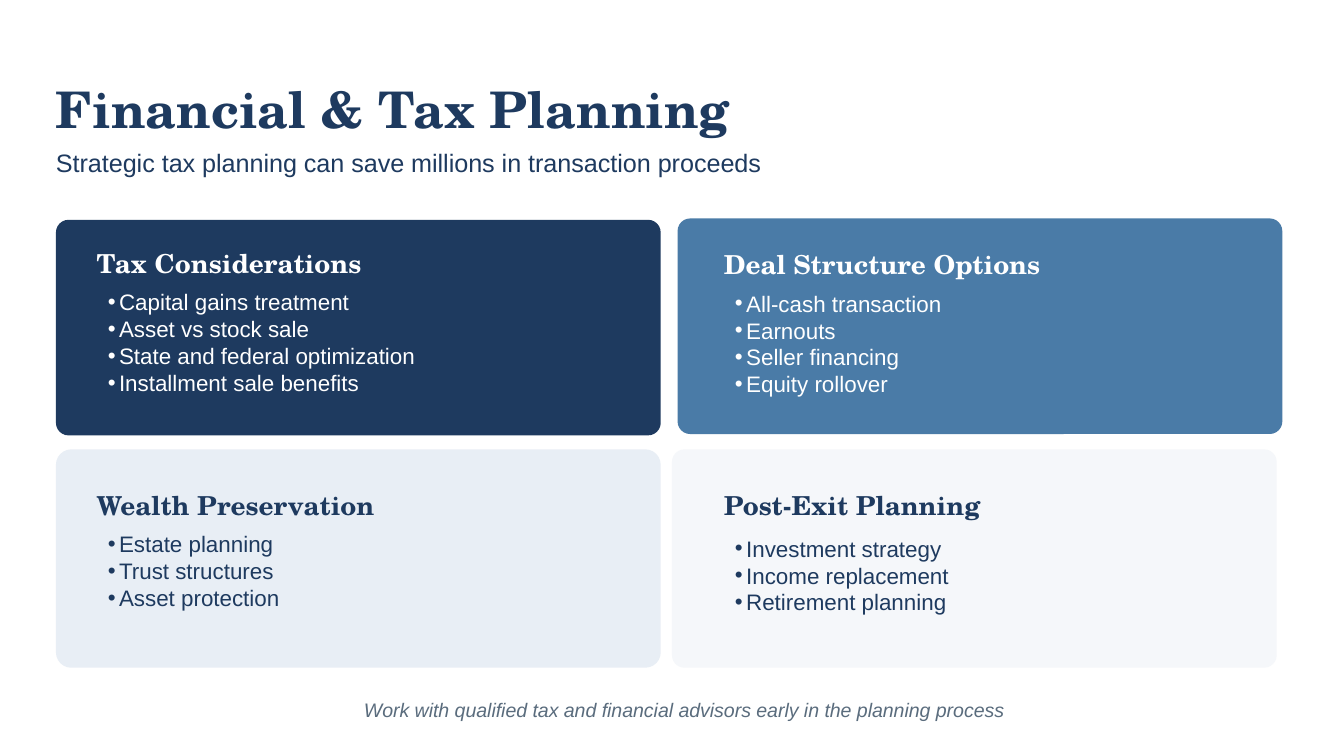
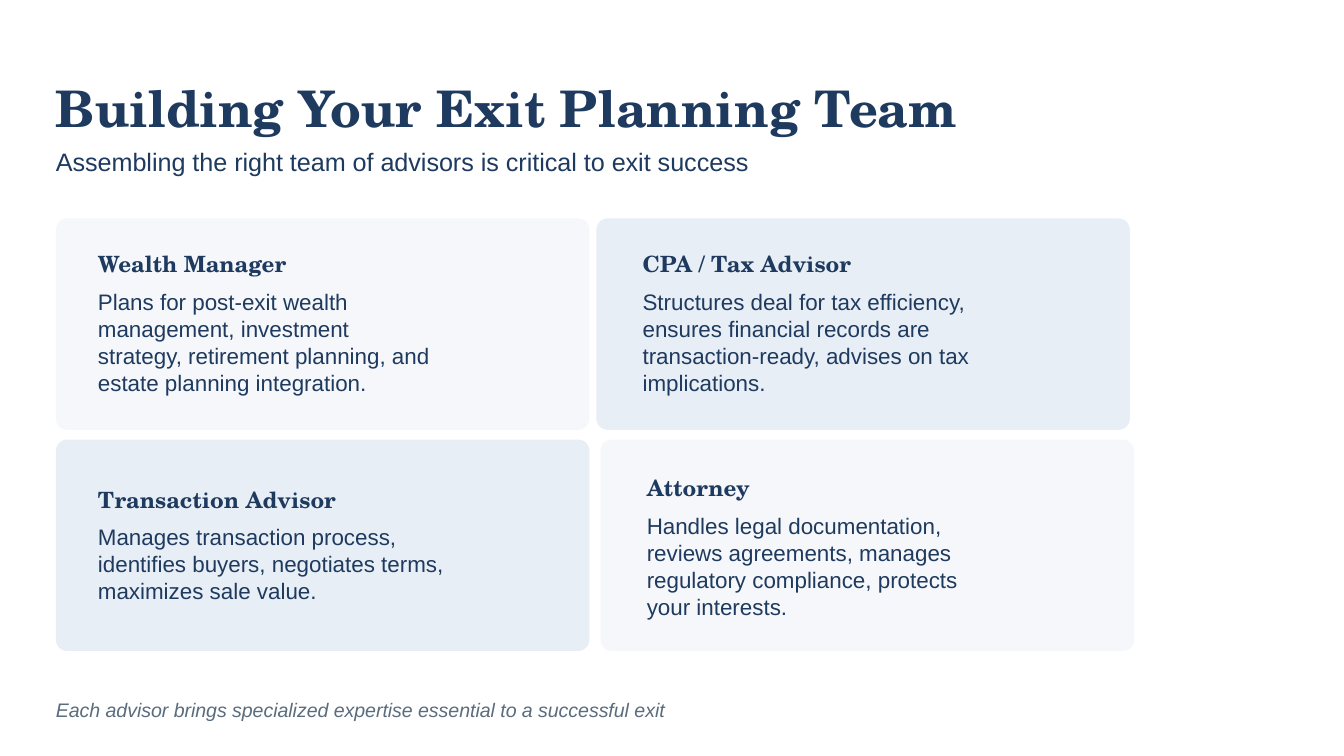
from lxml.etree import SubElement
from pptx import Presentation
from pptx.dml.color import RGBColor as RGB
from pptx.enum.shapes import MSO_SHAPE as Shape
from pptx.enum.text import PP_ALIGN as Align
from pptx.oxml.ns import qn
from pptx.util import Emu, Pt

PX = 9525
LEFT = 40
WIDE = 898
INSET = 8
SERIF = "TeX Gyre Schola"
SANS = "Arial"

HUES = {
    "navy": "1E3A5F",
    "blue": "4A7BA7",
    "pale": "E8EEF5",
    "mist": "F5F7FA",
    "white": "FFFFFF",
    "slate": "5A6C7D",
}

FONTS = {
    "title": {"name": SERIF, "size": Pt(27), "bold": True},
    "lead": {"name": SANS, "size": Pt(13.5)},
    "topic": {"name": SERIF, "size": Pt(14), "bold": True},
    "role": {"name": SERIF, "size": Pt(12), "bold": True},
    "body": {"name": SANS, "size": Pt(12)},
    "foot": {"name": SANS, "size": Pt(10.5), "italic": True},
}

PARAS = {
    "title": {"line_spacing": Pt(30), "space_after": Pt(6)},
    "lead": {"line_spacing": Pt(21), "space_after": Pt(9)},
    "topic": {"line_spacing": Pt(13.5), "space_after": Pt(4.5)},
    "role": {"line_spacing": Pt(14.4), "space_after": Pt(6)},
    "body": {},
    "foot": {"line_spacing": Pt(14)},
}


def px(num):
    return Emu(num * PX)


def apply(item, values):
    for key, val in values.items():
        setattr(item, key, val)


class Deck:
    def __init__(self):
        self.show = Presentation()
        apply(self.show, {"slide_width": px(960), "slide_height": px(540)})

    def start(self, title, lead, top):
        self.page = self.show.slides.add_slide(self.show.slide_layouts[6])
        fill = self.page.background.fill
        fill.solid()
        fill.fore_color.rgb = RGB.from_string(HUES["white"])
        self.text([title], (LEFT, top, 732, 40), "title")
        self.text([lead], (LEFT, top + 40, WIDE, 28), "lead")

    def card(self, box, hue, curve):
        card = self.page.shapes.add_shape(Shape.ROUNDED_RECTANGLE, *map(px, box))
        card.adjustments[0] = curve / box[3]
        card.shadow.inherit = False
        card.fill.solid()
        card.fill.fore_color.rgb = RGB.from_string(HUES[hue])
        card.line.fill.background()

    def text(self, lines, box, style, hue="navy", align=Align.LEFT, dots=False):
        frame = self.page.shapes.add_textbox(*map(px, box)).text_frame
        apply(frame, {
            "word_wrap": True,
            "margin_left": px(INSET if dots else 0),
            "margin_top": 0,
            "margin_right": 0,
            "margin_bottom": 0,
        })
        for num, line in enumerate(lines):
            para = frame.add_paragraph() if num else frame.paragraphs[0]
            if dots:
                self.dot(para)
            apply(para, {"alignment": align, **PARAS[style]})
            run = para.add_run()
            run.text = line
            apply(run.font, FONTS[style])
            run.font.color.rgb = RGB.from_string(HUES[hue])

    def dot(self, para):
        props = para._p.get_or_add_pPr()
        props.set("marL", str(px(INSET)))
        props.set("indent", str(-px(INSET)))
        SubElement(props, qn("a:buFont")).set("typeface", SANS)
        SubElement(props, qn("a:buChar")).set("char", "•")

    def foot(self, line, align=Align.LEFT):
        self.text([line], (LEFT, 497, WIDE, 18), "foot", "slate", align)


TOPICS = [
    ((LEFT, 157, 432, 154), "navy", 9, "white", (69, 181),
     (206, 373, 90), "Tax Considerations",
     ["Capital gains treatment", "Asset vs stock sale",
      "State and federal optimization", "Installment sale benefits"]),
    ((LEFT, 321, 432, 156), "pale", 11, "navy", (69, 354),
     (379, 290, 74), "Wealth Preservation",
     ["Estate planning", "Trust structures", "Asset protection"]),
    ((484, 156, 432, 154), "blue", 9, "white", (517, 182),
     (207, 300, 91), "Deal Structure Options",
     ["All-cash transaction", "Earnouts", "Seller financing", "Equity rollover"]),
    ((480, 321, 432, 156), "mist", 9, "navy", (517, 354),
     (382, 232, 64), "Post-Exit Planning",
     ["Investment strategy", "Income replacement", "Retirement planning"]),
]

ROLES = [
    (LEFT, 156, "mist", 70, 179, 240, 59, "Wealth Manager",
     "Plans for post-exit wealth management, investment strategy, "
     "retirement planning, and estate planning integration."),
    (426, 156, "pale", 459, 179, 251, 59, "CPA / Tax Advisor",
     "Structures deal for tax efficiency, ensures financial records are "
     "transaction-ready, advises on tax implications."),
    (LEFT, 314, "pale", 70, 347, 253, 39, "Transaction Advisor",
     "Manages transaction process, identifies buyers, negotiates terms, "
     "maximizes sale value."),
    (429, 314, "mist", 462, 339, 249, 59, "Attorney",
     "Handles legal documentation, reviews agreements, manages "
     "regulatory compliance, protects your interests."),
]


def plan(deck):
    deck.start("Financial & Tax Planning",
               "Strategic tax planning can save millions in transaction proceeds", 59)
    for box, fill, curve, ink, (left, top), (low, span, high), head, items in TOPICS:
        deck.card(box, fill, curve)
        deck.text([head], (left, top, 290, 22), "topic", ink)
        deck.text(items, (left, low, span, high), "body", ink, dots=True)
    deck.foot("Work with qualified tax and financial advisors early in the planning process",
              Align.CENTER)


def team(deck):
    deck.start("Building Your Exit Planning Team",
               "Assembling the right team of advisors is critical to exit success", 58)
    for left, top, fill, inner, start, wide, high, head, duty in ROLES:
        deck.card((left, top, 381, 151), fill, 8)
        deck.text([head], (inner, start, wide, 19), "role")
        deck.text([duty], (inner, start + 27, wide, high), "body")
    deck.foot("Each advisor brings specialized expertise essential to a successful exit")


def main():
    deck = Deck()
    plan(deck)
    team(deck)
    deck.show.save("out.pptx")


if __name__ == "__main__":
    main()
